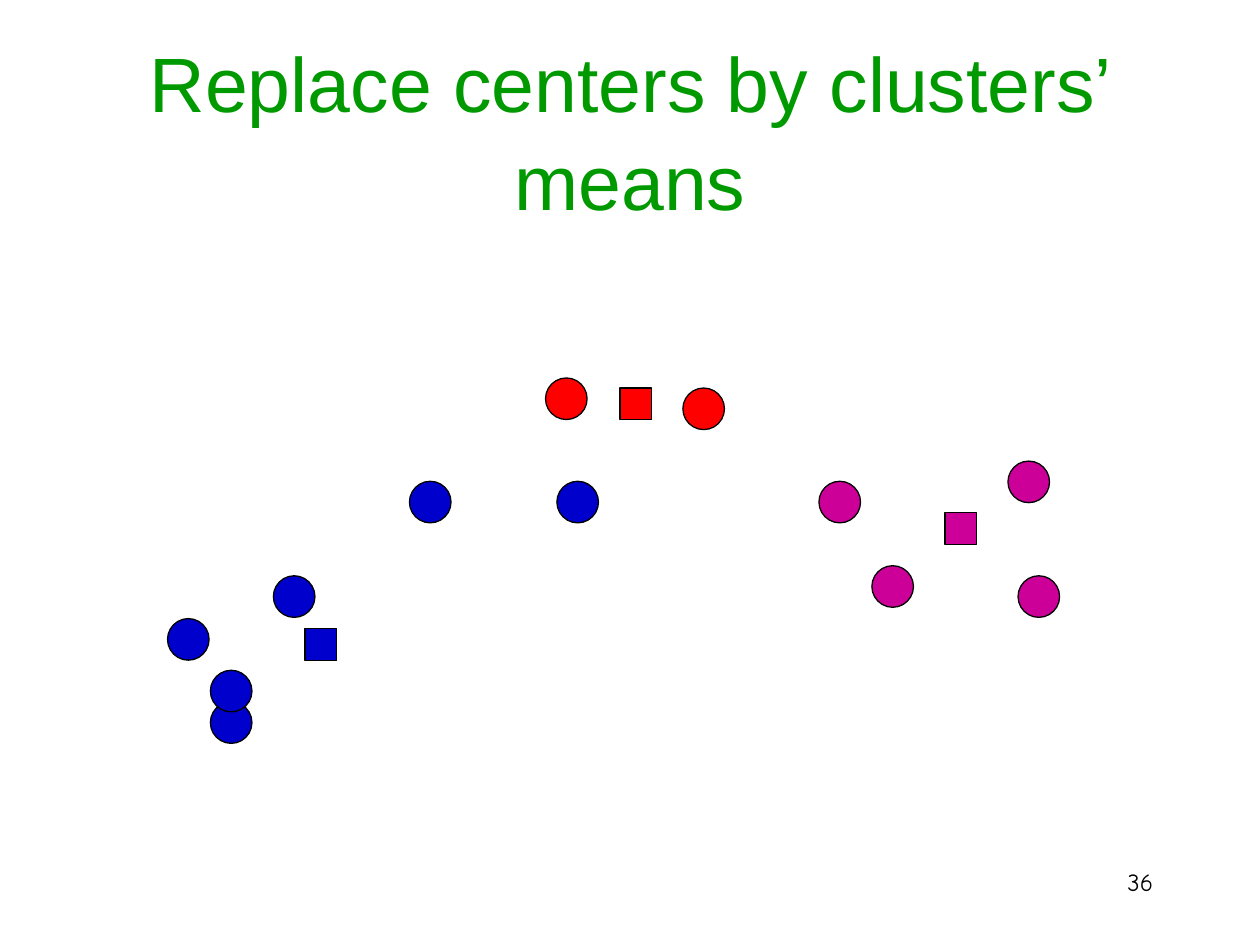
from pptx import Presentation
from pptx.dml.color import RGBColor
from pptx.enum.shapes import MSO_SHAPE
from pptx.enum.text import MSO_ANCHOR, PP_ALIGN
from pptx.util import Inches, Pt

CIRCLE, SQUARE = MSO_SHAPE.OVAL, MSO_SHAPE.RECTANGLE
CENTER, RIGHT = PP_ALIGN.CENTER, PP_ALIGN.RIGHT
MIDDLE = MSO_ANCHOR.MIDDLE
TITLE_ONLY = 5

COLORS = {
    "title": "009900",
    "ink": "000000",
    "blue": "0000CC",
    "red": "FF0000",
    "magenta": "CC0099",
}
POINT_SIZE = 0.33
MEAN_SIZE = 0.25

CLUSTERS = {
    "blue": {
        "points": [(1.67, 5.57), (1.33, 4.91), (2.17, 4.57),
                   (4.42, 3.82), (3.25, 3.82), (1.67, 5.32)],
        "mean": (2.42, 4.99),
    },
    "red": {
        "points": [(4.33, 3), (5.42, 3.08)],
        "mean": (4.92, 3.08),
    },
    "magenta": {
        "points": [(8, 3.66), (8.08, 4.57), (6.5, 3.82), (6.92, 4.49)],
        "mean": (7.5, 4.07),
    },
}


class ClusterSlide:
    def __init__(self, slide):
        self.slide = slide

    def color(self, name):
        return RGBColor.from_string(COLORS[name])

    def style(self, paragraph, font_name, size, color, align):
        paragraph.alignment = align
        paragraph.font.name = font_name
        paragraph.font.size = Pt(size)
        paragraph.font.color.rgb = self.color(color)

    def title(self, text, left, top, width, height):
        title = self.slide.shapes.title
        title.left, title.top = Inches(left), Inches(top)
        title.width, title.height = Inches(width), Inches(height)
        frame = title.text_frame
        frame.text = text
        frame.word_wrap = True
        frame.vertical_anchor = MIDDLE
        heading = frame.paragraphs[0]
        heading.line_spacing = 1.06
        self.style(heading, "Arial", 44, "title", CENTER)

    def page_number(self, text, left, top, width, height):
        box = self.slide.shapes.add_textbox(
            Inches(left), Inches(top), Inches(width), Inches(height))
        frame = box.text_frame
        frame.word_wrap = True
        frame.text = text
        self.style(frame.paragraphs[0], "Comic Neue", 14, "ink", RIGHT)

    def marker(self, kind, position, size, color):
        left, top = position
        marker = self.slide.shapes.add_shape(
            kind, Inches(left), Inches(top), Inches(size), Inches(size))
        marker.shadow.inherit = False
        marker.fill.solid()
        marker.fill.fore_color.rgb = self.color(color)
        marker.line.color.rgb = self.color("ink")
        marker.line.width = Pt(0.75)


def main():
    deck = Presentation()
    deck.slide_width, deck.slide_height = Inches(10), Inches(7.5)
    page = ClusterSlide(deck.slides.add_slide(deck.slide_layouts[TITLE_ONLY]))

    page.title("Replace centers by clusters’ means", 0.75, 0.39, 8.5, 1.25)
    page.page_number("36", 7.17, 6.83, 2.08, 0.5)

    for color, cluster in CLUSTERS.items():
        for point in cluster["points"]:
            page.marker(CIRCLE, point, POINT_SIZE, color)
        page.marker(SQUARE, cluster["mean"], MEAN_SIZE, color)

    deck.save("out.pptx")


if __name__ == "__main__":
    main()
